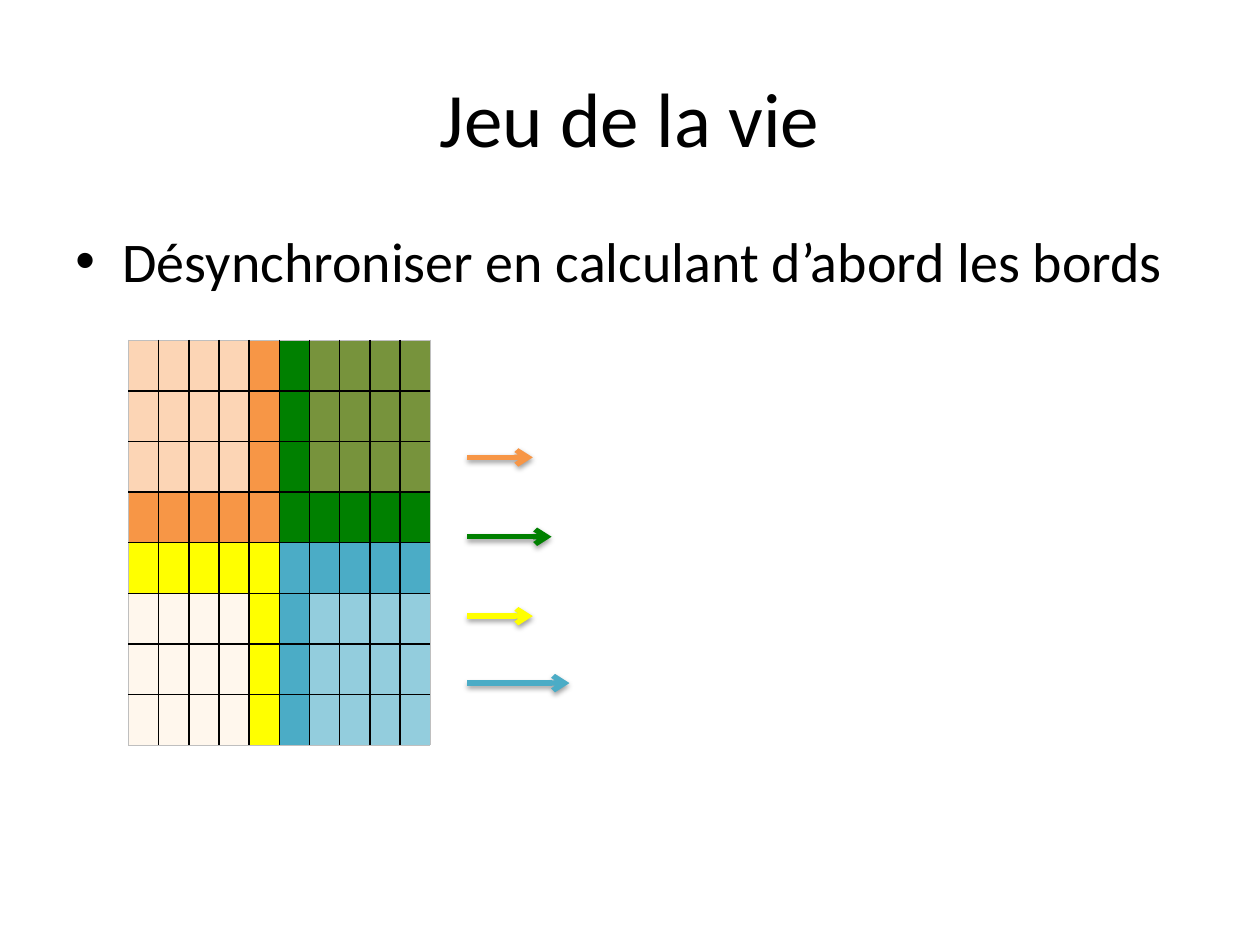
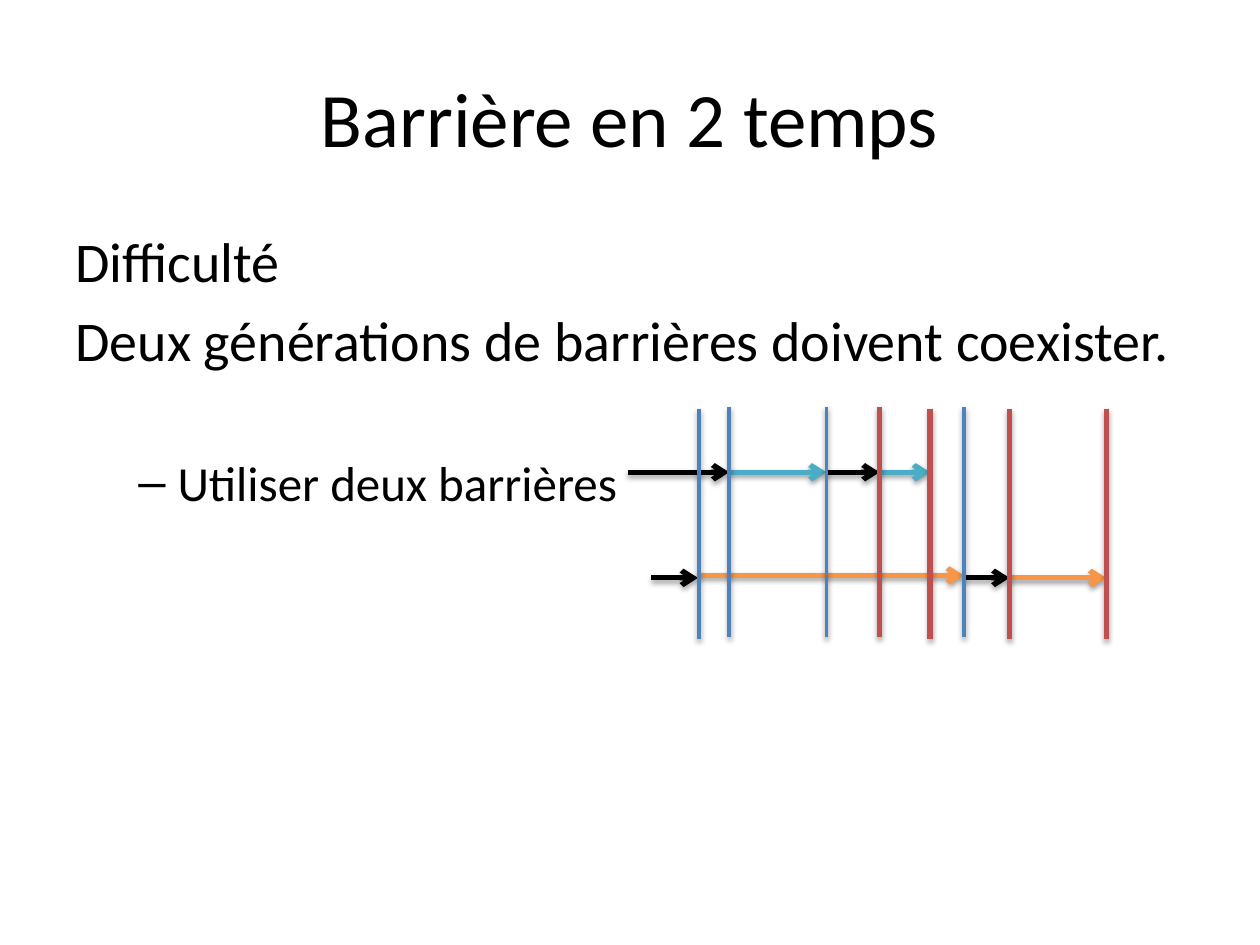
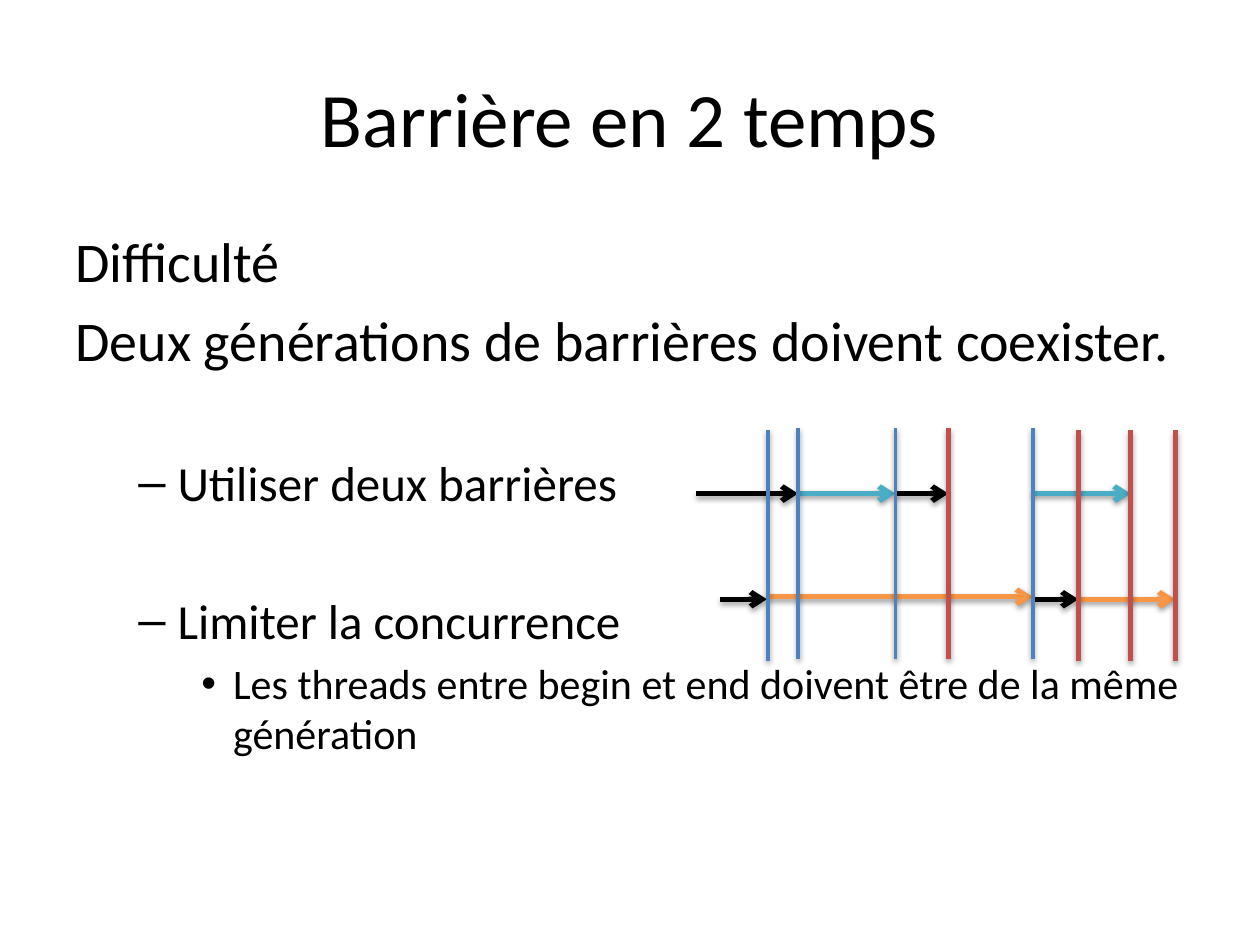
from dataclasses import dataclass

from lxml.etree import SubElement
from pptx import Presentation
from pptx.dml.color import RGBColor
from pptx.enum.shapes import MSO_CONNECTOR
from pptx.enum.text import MSO_ANCHOR, PP_ALIGN
from pptx.oxml.ns import qn
from pptx.util import Cm, Pt


@dataclass(frozen=True)
class Theme:
    font: str = "Calibri"
    title_size: int = 44
    level_sizes: tuple = (32, 28, 24)
    level_margins: tuple = (0.95, 2.06, 3.18)
    level_hangs: tuple = (0.95, 0.79, 0.64)
    black: str = "000000"
    gray: str = "BFBFBF"
    orange: str = "F79646"
    pale_orange: str = "FCD5B5"
    green: str = "008000"
    olive: str = "77933C"
    yellow: str = "FFFF00"
    cream: str = "FFF7ED"
    cyan: str = "4BACC6"
    pale_cyan: str = "93CDDD"
    blue: str = "4F81BD"
    red: str = "C0504D"
    thin: float = 2
    thick: float = 3


THEME = Theme()


def add_xml(parent, tag, **attributes):
    return SubElement(parent, qn(tag), {k: str(v) for k, v in attributes.items()})


class Deck:
    def __init__(self, theme):
        self.theme = theme
        self.prs = Presentation()
        self.prs.slide_width, self.prs.slide_height = Cm(25.4), Cm(19.05)
        self.slide = None

    def new_slide(self, title):
        self.slide = self.prs.slides.add_slide(self.prs.slide_layouts[6])
        tf = self.text_frame(0.76, 3.18)
        tf.vertical_anchor = MSO_ANCHOR.MIDDLE
        p = tf.paragraphs[0]
        p.alignment = PP_ALIGN.CENTER
        self.run(p, title, self.theme.title_size)

    def text_frame(self, top, height):
        sp = self.slide.shapes.add_textbox(Cm(1.27), Cm(top), Cm(22.86), Cm(height))
        tf = sp.text_frame
        tf.word_wrap = True
        return tf

    def run(self, p, text, size):
        r = p.add_run()
        r.text = text
        r.font.name, r.font.size = self.theme.font, Pt(size)
        r.font.color.rgb = RGBColor.from_string(self.theme.black)

    def body(self, items):
        """Each item is (text, level, bullet, whether a line is skipped above)."""
        tf = self.text_frame(4.45, 12.57)
        for i, (text, level, bullet, skip) in enumerate(items):
            p = tf.paragraphs[0] if i == 0 else tf.add_paragraph()
            size = self.theme.level_sizes[level]
            p.level = level
            p.space_before = Pt(round(size * (1.62 if skip else 0.2), 1))
            self.run(p, text, size)
            if bullet:
                pPr = p._p.get_or_add_pPr()
                pPr.set("marL", str(Cm(self.theme.level_margins[level])))
                pPr.set("indent", str(-Cm(self.theme.level_hangs[level])))
                add_xml(pPr, "a:buFont", typeface="Arial")
                add_xml(pPr, "a:buChar", char=bullet)

    def line(self, x1, y1, x2, y2, color, width, arrow=False):
        cx = self.slide.shapes.add_connector(
            MSO_CONNECTOR.STRAIGHT, Cm(x1), Cm(y1), Cm(x2), Cm(y2))
        cx.line.color.rgb = RGBColor.from_string(color)
        cx.line.width = Pt(width)
        if arrow:
            add_xml(cx.line._get_or_add_ln(), "a:tailEnd", type="arrow")
        dark = color in (self.theme.black, self.theme.red)
        effects = add_xml(cx._element.spPr, "a:effectLst")
        shadow = add_xml(effects, "a:outerShdw", blurRad=Pt(3.1),
                         dist=Pt(1.8 if dark else 1.6), dir=5400000, rotWithShape=0)
        shade = add_xml(shadow, "a:srgbClr", val=self.theme.black)
        add_xml(shade, "a:alpha", val=35000 if dark else 38000)

    def arrow(self, x1, x2, y, color):
        self.line(x1, y, x2, y, color, self.theme.thick, arrow=True)

    def grid(self, left, top, col_width, row_height, colors):
        """Table of empty coloured cells, ruled in black inside a gray frame."""
        rows, cols = len(colors), len(colors[0])
        table = self.slide.shapes.add_table(
            rows, cols, Cm(left), Cm(top), Cm(cols * col_width), Cm(rows * row_height)).table
        table.first_row = table.horz_banding = False
        for r, row in enumerate(colors):
            for c, color in enumerate(row):
                cell = table.cell(r, c)
                outer = {"L": c == 0, "R": c == cols - 1, "T": r == 0, "B": r == rows - 1}
                for side, is_outer in outer.items():
                    self.border(cell, side, is_outer)
                cell.fill.solid()
                cell.fill.fore_color.rgb = RGBColor.from_string(color)

    def border(self, cell, side, is_outer):
        ln = add_xml(cell._tc.get_or_add_tcPr(), f"a:ln{side}", w=Pt(0.5 if is_outer else 1))
        fill = add_xml(ln, "a:solidFill")
        add_xml(fill, "a:srgbClr", val=self.theme.gray if is_outer else self.theme.black)

    def barrier_diagram(self, left, top, second_work):
        """Two threads and their barriers; second_work spans thread 1's last step."""
        t = self.theme
        thread1, thread2 = 1.32, 3.45
        steps = [
            (2.05, 4.01, thread1, t.cyan), (1.42, 6.78, thread2 - 0.05, t.orange),
            (0, 2.05, thread1, t.black), (0.48, 1.42, thread2, t.black),
            (4.01, 5.08, thread1, t.black), (*second_work, thread1, t.cyan),
            (6.78, 7.7, thread2, t.black), (7.7, 9.65, thread2, t.orange),
        ]
        for start, end, y, color in steps:
            self.arrow(left + start, left + end, top + y, color)
        barriers = [
            (t.blue, t.thin, [(1.44, 0.04), (2.05, 0), (4.01, 0), (6.78, 0)]),
            (t.red, t.thick, [(5.08, 0), (second_work[1], 0.04), (7.7, 0.04), (9.65, 0.04)]),
        ]
        for color, width, places in barriers:
            for x, drop in places:
                y = top + drop
                self.line(left + x, y, left + x, y + 4.65, color, width)


def life_colors(t):
    """8 x 10 cells in four blocks, the edges between blocks in the strong colour."""
    blocks = [[(t.orange, t.pale_orange), (t.green, t.olive)],
              [(t.yellow, t.cream), (t.cyan, t.pale_cyan)]]
    return [[blocks[r // 4][c // 5][0 if r in (3, 4) or c in (4, 5) else 1]
             for c in range(10)] for r in range(8)]


def main():
    deck = Deck(THEME)

    deck.new_slide("Jeu de la vie")
    deck.body([("Désynchroniser en calculant d’abord les bords", 0, "•", False)])
    deck.grid(2.59, 6.86, 0.58, 1.02, life_colors(THEME))
    for y, length, color in [(13.77, 2.06, THEME.cyan), (12.42, 1.32, THEME.yellow),
                             (10.82, 1.7, THEME.green), (9.22, 1.32, THEME.orange)]:
        deck.arrow(9.42, 9.42 + length, y, color)

    difficulty = [
        ("Difficulté", 0, None, False),
        ("Deux générations de barrières doivent coexister.", 0, None, False),
        ("Utiliser deux barrières", 1, "–", True),
    ]
    limit = [
        ("Limiter la concurrence", 1, "–", True),
        ("Les threads entre begin et end doivent être de la même génération", 2, "•", False),
    ]
    for items, left, top, second_work in [
        (difficulty, 12.65, 8.2, (5.08, 6.1)),
        (difficulty + limit, 14.04, 8.63, (6.78, 8.75)),
    ]:
        deck.new_slide("Barrière en 2 temps")
        deck.body(items)
        deck.barrier_diagram(left, top, second_work)

    deck.prs.save("out.pptx")


if __name__ == "__main__":
    main()
